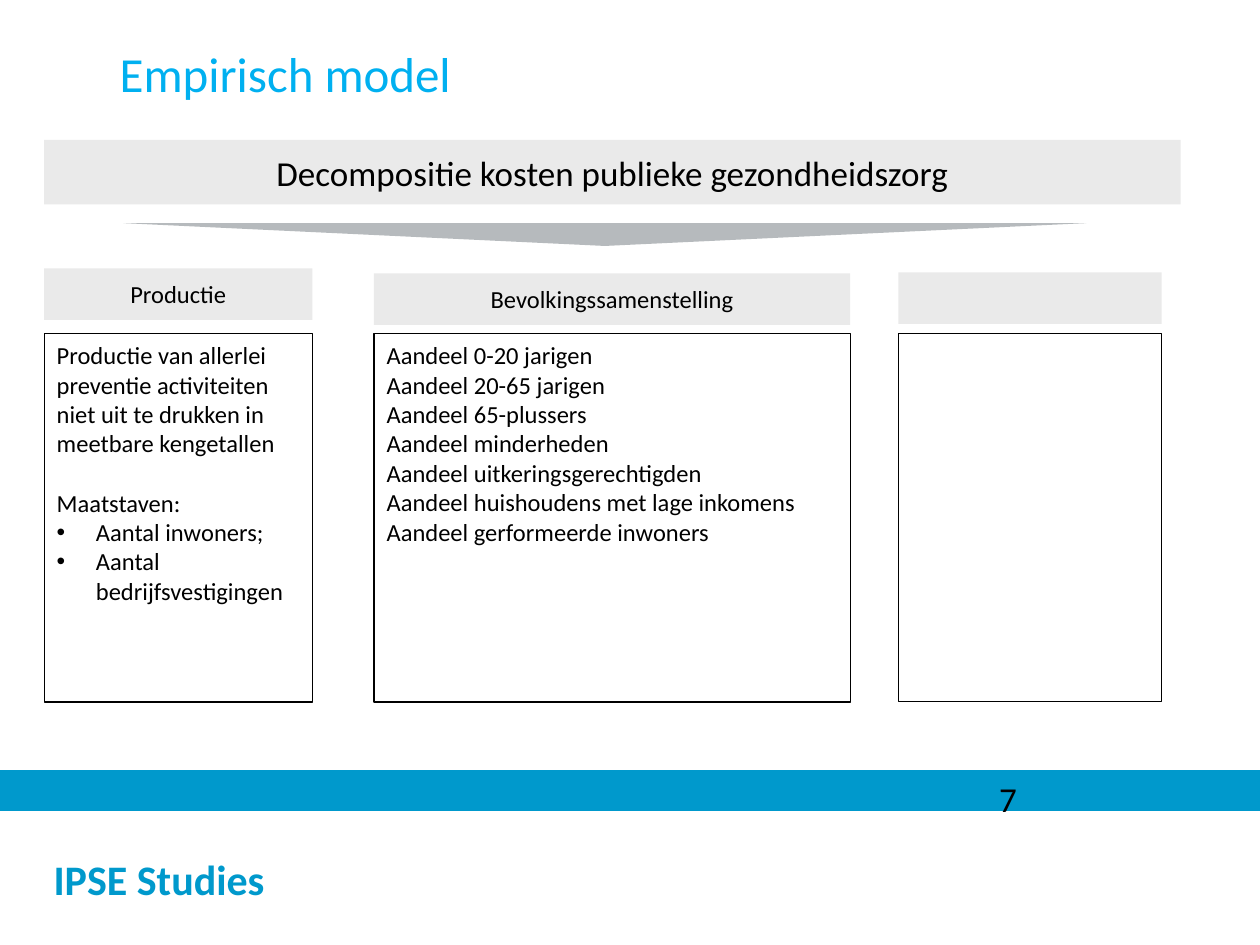
import pptx
import pptx.dml.color
import pptx.enum.shapes
import pptx.enum.text
import pptx.oxml.ns
import pptx.util
from lxml import etree

Cm, Pt = pptx.util.Cm, pptx.util.Pt
SHAPE = pptx.enum.shapes.MSO_SHAPE
ANCHOR = pptx.enum.text.MSO_ANCHOR
ALIGN = pptx.enum.text.PP_ALIGN

BLACK, WHITE, GREY, ARROW_GREY = "000000", "FFFFFF", "EAEAEA", "B6BABD"
BAND_BLUE, TITLE_BLUE = "0099CC", "00B0F0"
LEFT = 0.89
HEADING_HEIGHT = 1.04
BOX_TOP, BOX_HEIGHT = 6.73, 7.42
BULLET_INDENT = 0.79


def color(hex_value):
    return pptx.dml.color.RGBColor.from_string(hex_value)


def place(shape, left, top, width, height):
    shape.left, shape.top = Cm(left), Cm(top)
    shape.width, shape.height = Cm(width), Cm(height)


def paint(shape, fill, line=None):
    shape.fill.solid()
    shape.fill.fore_color.rgb = color(fill)
    if line:
        shape.line.color.rgb = color(line)
        shape.line.width = Pt(0.75)
    else:
        shape.line.fill.background()


def add_block(slide, area, fill, line=None, kind=SHAPE.RECTANGLE):
    block = slide.shapes.add_shape(kind, *(Cm(length) for length in area))
    block.shadow.inherit = False
    paint(block, fill, line)
    return block


def write(paragraph, text, size, text_color=BLACK, bold=False):
    run = paragraph.add_run()
    run.text = text
    run.font.name = "Calibri"
    run.font.size = Pt(size)
    run.font.bold = bold
    run.font.color.rgb = color(text_color)


def set_indent(paragraph, margin, first_line=0, bullet=None):
    properties = paragraph._p.get_or_add_pPr()
    properties.set("marL", str(Cm(margin)))
    properties.set("indent", str(Cm(first_line)))
    tag = "a:buChar" if bullet else "a:buNone"
    mark = etree.SubElement(properties, pptx.oxml.ns.qn(tag))
    if bullet:
        mark.set("char", bullet)


def add_heading(slide, area, text, size=14):
    heading = add_block(slide, area, GREY)
    if text:
        frame = heading.text_frame
        frame.word_wrap = True
        frame.vertical_anchor = ANCHOR.MIDDLE
        frame.paragraphs[0].alignment = ALIGN.CENTER
        write(frame.paragraphs[0], text, size)


def fill_list(box, area, items):
    """Each item is (text, bulleted, space before in points)."""
    place(box, *area)
    paint(box, WHITE, BLACK)
    frame = box.text_frame
    frame.auto_size = pptx.enum.text.MSO_AUTO_SIZE.NONE
    frame.vertical_anchor = ANCHOR.TOP
    for number, (text, bulleted, space_before) in enumerate(items):
        paragraph = frame.add_paragraph() if number else frame.paragraphs[0]
        if bulleted:
            set_indent(paragraph, BULLET_INDENT, -BULLET_INDENT, "•")
        else:
            set_indent(paragraph, 0)
        paragraph.space_before = Pt(space_before)
        write(paragraph, text, 14)


def add_title(slide, text):
    title = slide.shapes.title
    place(title, LEFT, 0.74, 22.4, 1.45)
    title.text_frame.vertical_anchor = ANCHOR.TOP
    paragraph = title.text_frame.paragraphs[0]
    set_indent(paragraph, 1.27)
    paragraph.alignment = ALIGN.LEFT
    paragraph.space_after = Pt(18)
    write(paragraph, text, 28, TITLE_BLUE)


def add_footer(slide):
    footer = add_block(slide, (0, 16.36, 25.4, 2.69), WHITE)
    frame = footer.text_frame
    frame.word_wrap = True
    frame.margin_left = Cm(1.08)
    frame.vertical_anchor = ANCHOR.MIDDLE
    frame.paragraphs[0].alignment = ALIGN.LEFT
    write(frame.paragraphs[0], "IPSE Studies", 24, BAND_BLUE, bold=True)

    add_block(slide, (0, 15.54, 25.4, 0.79), BAND_BLUE, BAND_BLUE)
    page_number = slide.shapes.add_textbox(Cm(19.89), Cm(15.54), Cm(5.28), Cm(0.64))
    page_number.text_frame.word_wrap = True
    write(page_number.text_frame.paragraphs[0], "7", 20)


def main():
    deck = pptx.Presentation()
    deck.slide_width, deck.slide_height = Cm(25.4), Cm(19.05)
    slide = deck.slides.add_slide(deck.slide_layouts[3])  # title, two lists

    add_footer(slide)
    add_title(slide, "Empirisch model")

    # Subject bar and the arrow pointing down from it
    add_heading(slide, (LEFT, 2.82, 22.91, 1.3),
                "Decompositie kosten publieke gezondheidszorg", 20)
    arrow = add_block(slide, (2.49, 4.5, 19.41, 0.46), ARROW_GREY,
                      kind=SHAPE.ISOSCELES_TRIANGLE)
    arrow._element.spPr.find(pptx.oxml.ns.qn("a:xfrm")).set("flipV", "1")

    # Three columns: left, width, heading top, heading, list items
    production = [
        ("Productie van allerlei preventie activiteiten niet uit te drukken "
         "in meetbare kengetallen", False, 0),
        ("Maatstaven:", False, 17),
        ("Aantal inwoners;", True, 0),
        ("Aantal bedrijfsvestigingen", True, 0),
    ]
    groups = ["0-20 jarigen", "20-65 jarigen", "65-plussers", "minderheden",
              "uitkeringsgerechtigden", "huishoudens met lage inkomens",
              "gerformeerde inwoners"]
    population = [(f"Aandeel {group}", False, 0) for group in groups]
    columns = [
        (LEFT, 5.41, 5.41, "Productie", production),
        (7.54, 9.6, 5.51, "Bevolkingssamenstelling", population),
        (18.11, 5.31, 5.49, None, None),
    ]
    for index, (left, width, top, heading, items) in enumerate(columns, 1):
        add_heading(slide, (left, top, width, HEADING_HEIGHT), heading)
        area = (left, BOX_TOP, width, BOX_HEIGHT)
        if items:
            fill_list(slide.placeholders[index], area, items)
        else:
            add_block(slide, area, WHITE, BLACK)

    deck.save("out.pptx")


if __name__ == "__main__":
    main()
